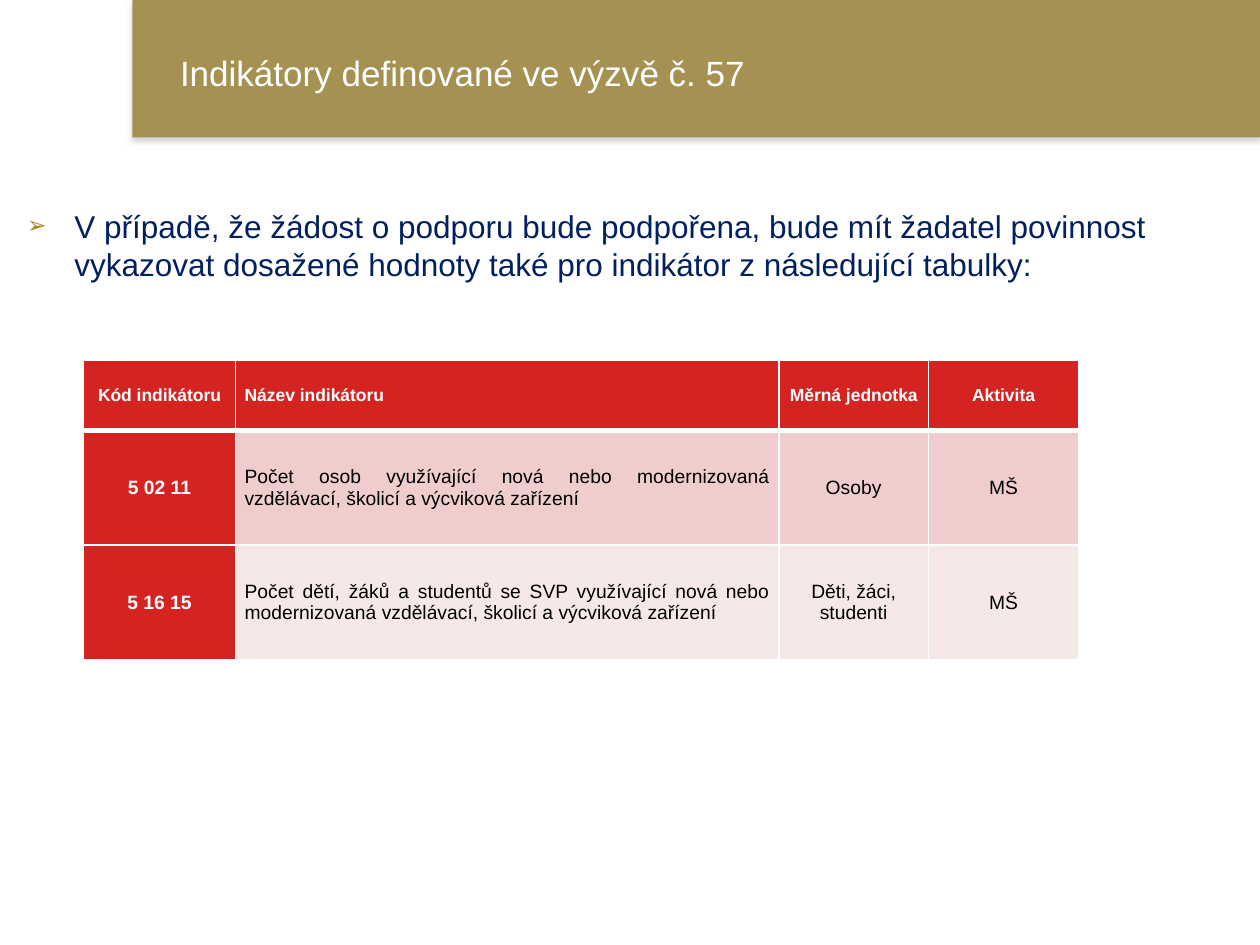
from lxml.etree import SubElement
from pptx import Presentation
from pptx.dml.color import RGBColor
from pptx.enum.shapes import MSO_SHAPE as Shape
from pptx.enum.text import MSO_ANCHOR as Anchor, PP_ALIGN as Align
from pptx.oxml import parse_xml
from pptx.oxml.ns import nsdecls, qn
from pptx.util import Cm, Pt

WHITE, BLACK, NAVY = "FFFFFF", "000000", "002060"
GOLD, BULLET_GOLD, RED = "A59253", "A98513", "D52322"
BAND_TINTS = ["EFCDCD", "F7E8E8"]

COLUMN_WIDTHS = [3.07, 10.95, 3.02, 3.02]
ROW_HEIGHTS = [1.42, 2.31, 2.31]
INDICATORS = [
    ["Kód indikátoru", "Název indikátoru", "Měrná jednotka", "Aktivita"],
    ["5 02 11",
     "Počet osob využívající nová nebo modernizovaná vzdělávací, školicí a výcviková zařízení",
     "Osoby", "MŠ"],
    ["5 16 15",
     "Počet dětí, žáků a studentů se SVP využívající nová nebo modernizovaná vzdělávací, "
     "školicí a výcviková zařízení",
     "Děti, žáci, studenti", "MŠ"],
]


def color(hex_value):
    return RGBColor.from_string(hex_value)


def apply(target, values):
    """Set every attribute of target named in values."""
    for name, value in values.items():
        setattr(target, name, value)


class SlideBuilder:
    font_name = "Arial"

    def __init__(self, slide):
        self.slide = slide

    def add_words(self, paragraph, words, size, ink, bold=False, align=Align.LEFT):
        paragraph.alignment = align
        run = paragraph.add_run()
        run.text = words
        apply(run.font, {"name": self.font_name, "size": Pt(size), "bold": bold})
        run.font.color.rgb = color(ink)

    def banner(self, left, top, width, height, fill):
        """Draw a borderless rectangle with a soft shadow below it."""
        band = self.slide.shapes.add_shape(
            Shape.RECTANGLE, Cm(left), Cm(top), Cm(width), Cm(height))
        band.fill.solid()
        band.fill.fore_color.rgb = color(fill)
        band.line.fill.background()
        band.shadow.inherit = False
        effects = band._element.spPr.find(qn("a:effectLst"))
        effects.append(parse_xml(
            f'<a:outerShdw {nsdecls("a")} blurRad="{Pt(3.1)}" dist="{Pt(1.8)}" '
            'dir="5400000" rotWithShape="0"><a:srgbClr val="808080">'
            '<a:alpha val="35000"/></a:srgbClr></a:outerShdw>'))

    def text(self, left, top, width, height, words, size, ink,
             anchor=Anchor.TOP, bullet=None):
        frame = self.slide.shapes.add_textbox(
            Cm(left), Cm(top), Cm(width), Cm(height)).text_frame
        apply(frame, {"word_wrap": True, "vertical_anchor": anchor})
        paragraph = frame.paragraphs[0]
        if bullet:
            self.add_bullet(paragraph, bullet)
        self.add_words(paragraph, words, size, ink)

    def add_bullet(self, paragraph, symbol):
        properties = paragraph._p.get_or_add_pPr()
        indent = Cm(0.95)
        properties.set("marL", str(indent))
        properties.set("indent", str(-indent))
        bullet_color = SubElement(properties, qn("a:buClr"))
        SubElement(bullet_color, qn("a:srgbClr"), val=BULLET_GOLD)
        SubElement(properties, qn("a:buSzPct"), val="74000")
        SubElement(properties, qn("a:buFont"), typeface=self.font_name)
        SubElement(properties, qn("a:buChar"), char=symbol)

    def borders(self, cell, top, bottom):
        widths = {"lnL": 1, "lnR": 1, "lnT": top, "lnB": bottom}
        properties = cell._tc.get_or_add_tcPr()
        for position, (side, width) in enumerate(widths.items()):
            properties.insert(position, parse_xml(
                f'<a:{side} {nsdecls("a")} w="{Pt(width)}"><a:solidFill>'
                f'<a:srgbClr val="{WHITE}"/></a:solidFill></a:{side}>'))

    def table(self, left, top, rows, widths, heights):
        table = self.slide.shapes.add_table(
            len(rows), len(widths), Cm(left), Cm(top),
            Cm(sum(widths)), Cm(sum(heights))).table
        for column, width in zip(table.columns, widths):
            column.width = Cm(width)
        for row, height in zip(table.rows, heights):
            row.height = Cm(height)
        for r, row in enumerate(rows):
            for c, words in enumerate(row):
                self.cell(table.cell(r, c), words, r, c)

    def cell(self, cell, words, row, column):
        is_header = row == 0
        is_label = is_header or column == 0
        apply(cell, {"vertical_anchor": Anchor.MIDDLE,
                     "margin_left": Cm(0.18), "margin_right": Cm(0.18),
                     "margin_top": 0, "margin_bottom": 0})
        cell.fill.solid()
        cell.fill.fore_color.rgb = color(RED if is_label else BAND_TINTS[row - 1])
        self.borders(cell, top=3 if row == 1 else 1, bottom=3 if is_header else 1)
        align = Align.CENTER
        if column == 1:
            align = Align.LEFT if is_header else Align.JUSTIFY
        self.add_words(cell.text_frame.paragraphs[0], words, 10 if is_header else 11,
                       WHITE if is_label else BLACK, is_label, align)


def main():
    presentation = Presentation()
    apply(presentation, {"slide_width": Cm(25.4), "slide_height": Cm(19.05)})
    builder = SlideBuilder(presentation.slides.add_slide(presentation.slide_layouts[6]))
    builder.banner(2.67, 0, 22.73, 2.77, GOLD)
    builder.text(3.38, 1.02, 20.75, 0.89, "Indikátory definované ve výzvě č. 57",
                 20, WHITE, anchor=Anchor.MIDDLE)
    builder.text(0.3, 4.05, 23.83, 4.95,
                 "V případě, že žádost o podporu bude podpořena, bude mít žadatel povinnost "
                 "vykazovat dosažené hodnoty také pro indikátor z následující tabulky:",
                 18, NAVY, bullet="➢")
    builder.table(1.68, 7.26, INDICATORS, COLUMN_WIDTHS, ROW_HEIGHTS)
    presentation.save("out.pptx")


if __name__ == "__main__":
    main()
